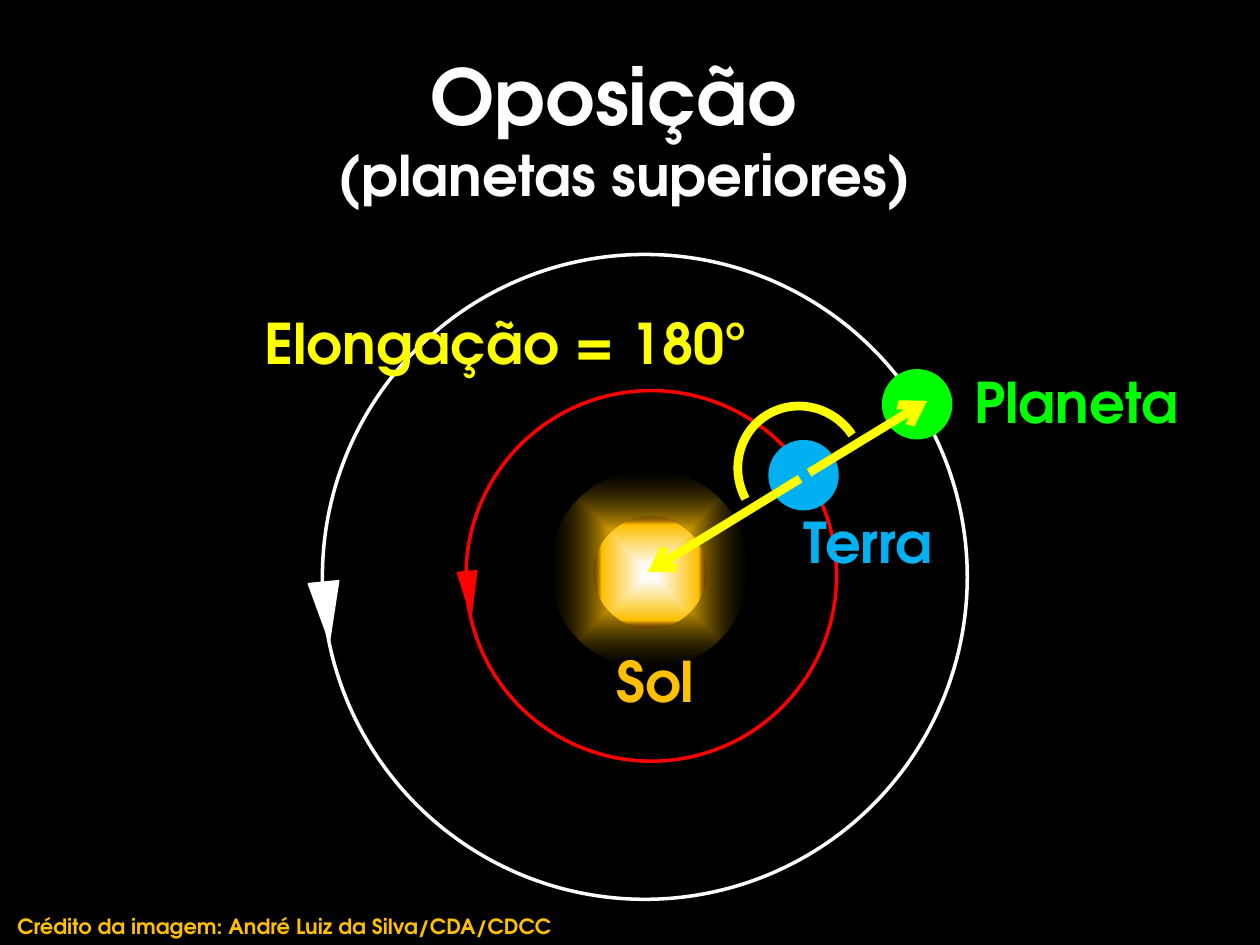
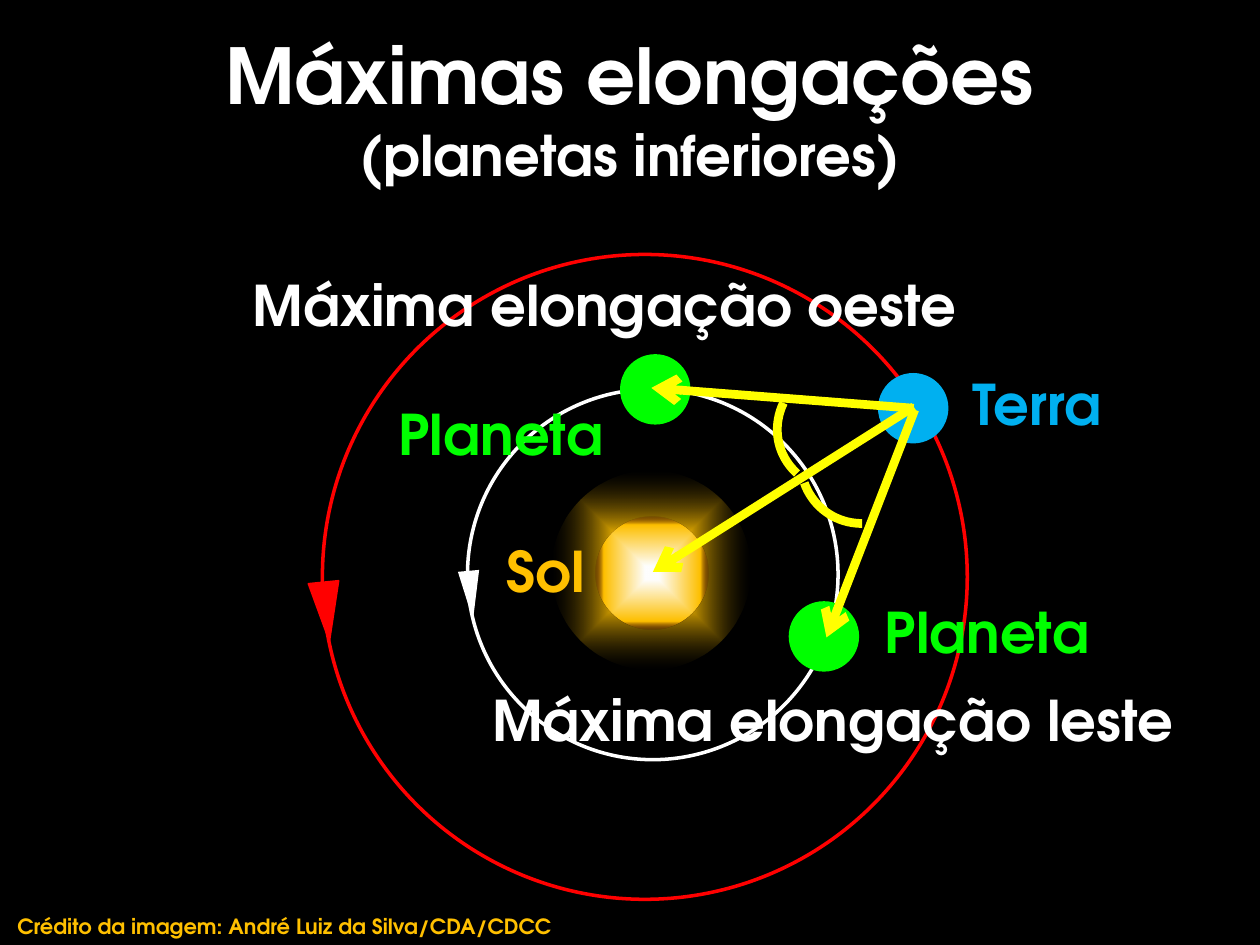
from lxml import etree
from pptx import Presentation
from pptx.dml.color import RGBColor
from pptx.enum.dml import MSO_LINE
from pptx.enum.shapes import MSO_CONNECTOR, MSO_SHAPE
from pptx.enum.text import MSO_ANCHOR, MSO_AUTO_SIZE, PP_ALIGN
from pptx.oxml.ns import nsdecls, qn
from pptx.oxml import parse_xml
from pptx.util import Cm, Pt

OVAL, ARC, TIP = MSO_SHAPE.OVAL, MSO_SHAPE.ARC, MSO_SHAPE.ISOSCELES_TRIANGLE
LINE, DASH = MSO_CONNECTOR.STRAIGHT, MSO_LINE.DASH
LEFT, MID = PP_ALIGN.LEFT, PP_ALIGN.CENTER
TOP, CENTRE = MSO_ANCHOR.TOP, MSO_ANCHOR.MIDDLE
GROW, FIXED = MSO_AUTO_SIZE.SHAPE_TO_FIT_TEXT, MSO_AUTO_SIZE.NONE

THEME = {
    "font": "TeX Gyre Adventor",
    "color": {
        "back": "000000", "text": "FFFFFF", "orbit": "FF0000", "ray": "FFFF00",
        "Sol": "FFC000", "Terra": "00B0F0", "Planeta": "00FF00",
    },
    "size": {"title": 44, "label": 32, "credit": 12},
    "line": {"axis": 1.5, "orbit": 2, "ray": 5, "tip": 1},
    "glow": [(7, "FFFFFF", 100), (32, "FFC000", 100), (100, "000000", 23)],
    "core": [(12, "FFFFFF", 100), (85, "FFC000", 100), (100, "4D0808", 17)],
}

CREDIT = "Crédito da imagem: André Luiz da Silva/CDA/CDCC"
WIDTHS = {"Sol": 2.59, "Terra": 3.61, "Planeta": 5.21,
          "Elongação = 180°": 10.59}
WIDE = 16.99
DISC, GLOW, CORE = 1.42, 4, 2.27
OUTER, INNER = 13, 7.47
HUB = (13, 11.63)

SLIDES = [
    {
        "title": ("Oposição ", "(planetas superiores)"),
        "place": (12.59, 2.58, 23.39),
        "orbits": ("text", "orbit"),
        "inner": (13.13, 11.61),
        "sun": (13.08, 11.47),
        "tip": (9.46, 12),
        "axis": [((13.11, 11.53), (18.49, 8.13))],
        "discs": [("Terra", 16.2, 9.58), ("Planeta", 18.49, 8.15)],
        "labels": [
            ("Sol", "Sol", 13.21, 13.72),
            ("Terra", "Terra", 17.5, 10.92),
            ("Planeta", "Planeta", 21.7, 8.1),
            ("Elongação = 180°", "ray", 10.2, 6.91),
        ],
        "rays": [((16.13, 9.65), (13.06, 11.53)), ((16.31, 9.53), (18.69, 8.08))],
        "arcs": [(16.14, 9.47, 2.59, 328.7, (110.05, 214.33))],
    },
    {
        "title": ("Máximas elongações", "(planetas inferiores)"),
        "place": (12.7, 2.17, 21.59),
        "orbits": ("orbit", "text"),
        "inner": (13.16, 11.58),
        "sun": (13.13, 11.49),
        "tip": (9.49, 12),
        "axis": [],
        "discs": [("Terra", 18.41, 8.23), ("Planeta", 13.21, 7.85),
                  ("Planeta", 16.61, 12.83)],
        "labels": [
            ("Máxima elongação oeste", "text", 12.2, 6.15),
            ("Máxima elongação leste", "text", 16.8, 14.5),
            ("Sol", "Sol", 11, 11.51),
            ("Terra", "Terra", 20.9, 8.13),
            ("Planeta", "Planeta", 19.9, 12.73),
            ("Planeta", "Planeta", 10.1, 8.74),
        ],
        "rays": [((18.42, 8.2), (13.16, 11.53)), ((18.42, 8.23), (13.13, 7.82)),
                 ((18.44, 8.26), (16.66, 12.85))],
        "arcs": [(17, 8.62, 2.67, 256.4, (143.39, 183.69)),
                 (17.41, 9.27, 2.59, 216, (141.22, 181.69))],
    },
]


def tint(name):
    return RGBColor.from_string(THEME["color"][name])


def frame(x, y, w, h):
    return Cm(x - w / 2), Cm(y - h / 2), Cm(w), Cm(h)


def stroke(line, name, kind):
    line.color.rgb = tint(name)
    line.width = Pt(THEME["line"][kind])


def shape(home, kind, x, y, w, h, fill=None, edge=None, turn=0):
    part = home.add_shape(kind, *frame(x, y, w, h))
    part.shadow.inherit = False
    part.rotation = turn
    if fill:
        part.fill.solid()
        part.fill.fore_color.rgb = tint(fill)
    else:
        part.fill.background()
    if edge:
        stroke(part.line, *edge)
    else:
        part.line.fill.background()
    return part


def fade(part, stops):
    marks = "".join(
        f'<a:gs pos="{pos * 1000}"><a:srgbClr val="{hue}">'
        f'<a:alpha val="{alpha * 1000}"/></a:srgbClr></a:gs>'
        for pos, hue, alpha in stops)
    grad = parse_xml(
        f'<a:gradFill {nsdecls("a")} rotWithShape="1"><a:gsLst>{marks}</a:gsLst>'
        '<a:path path="shape"><a:fillToRect l="50000" t="50000" r="50000" '
        'b="50000"/></a:path></a:gradFill>')
    props = part.fill._xPr
    props.replace(props.find(qn("a:noFill")), grad)


def sun(home, x, y):
    group = home.add_group_shape().shapes
    fade(shape(group, OVAL, x, y, GLOW, GLOW), THEME["glow"])
    fade(shape(group, OVAL, x + 0.02, y + 0.07, CORE, CORE), THEME["core"])


def link(home, start, end, name, kind):
    line = home.add_connector(LINE, *map(Cm, start + end))
    stroke(line.line, name, kind)
    etree.SubElement(line._element.spPr, qn("a:effectLst"))
    return line


def ray(home, start, end):
    line = link(home, start, end, "ray", "ray")
    etree.SubElement(line.line._get_or_add_ln(), qn("a:tailEnd"), type="arrow")


def write(home, box, runs, name, align=MID, anchor=TOP, fit=GROW):
    text = home.add_textbox(*box).text_frame
    look = {"word_wrap": True, "vertical_anchor": anchor, "auto_size": fit}
    for key, value in look.items():
        setattr(text, key, value)
    para = text.paragraphs[0]
    para.alignment = align
    for spot, (words, size) in enumerate(runs):
        if spot:
            para.add_line_break()
        run = para.add_run()
        run.text = words
        style = {"name": THEME["font"], "size": Pt(THEME["size"][size]), "bold": True}
        for key, value in style.items():
            setattr(run.font, key, value)
        run.font.color.rgb = tint(name)


def draw(slide, data):
    fill = slide.background.fill
    fill.solid()
    fill.fore_color.rgb = tint("back")
    home = slide.shapes
    for start, end in data["axis"]:
        link(home, start, end, "text", "axis").line.dash_style = DASH
    x, y, w = data["place"]
    write(home, frame(x, y, w, 4.09), zip(data["title"], ("title", "label")),
          "text", anchor=CENTRE, fit=FIXED)
    far, near = data["orbits"]
    shape(home, OVAL, *HUB, OUTER, OUTER, edge=(far, "orbit"))
    shape(home, OVAL, *data["inner"], INNER, INNER, edge=(near, "orbit"))
    for name, x, y in data["discs"]:
        shape(home, OVAL, x, y, DISC, DISC, name)
    sun(home, *data["sun"])
    for words, name, x, y in data["labels"]:
        box = frame(x, y, WIDTHS.get(words, WIDE), 1.63)
        write(home, box, [(words, "label")], name)
    for start, end in data["rays"]:
        ray(home, start, end)
    for x, y, h, turn, ends in data["arcs"]:
        arc = shape(home, ARC, x, y, 2.51, h, edge=("ray", "ray"), turn=turn)
        for spot, angle in enumerate(ends):
            arc.adjustments[spot] = angle
    shape(home, TIP, 6.58, 12.33, 0.61, 1.19, far, (far, "tip"), 174.3)
    shape(home, TIP, *data["tip"], 0.43, 0.99, near, turn=174.8)
    write(home, (Cm(0.1), Cm(18.29), Cm(13.41), Cm(0.76)),
          [(CREDIT, "credit")], "Sol", LEFT)


def main():
    deck = Presentation()
    deck.slide_width, deck.slide_height = Cm(25.4), Cm(19.05)
    for data in SLIDES:
        draw(deck.slides.add_slide(deck.slide_layouts[6]), data)
    deck.save("out.pptx")


if __name__ == "__main__":
    main()
